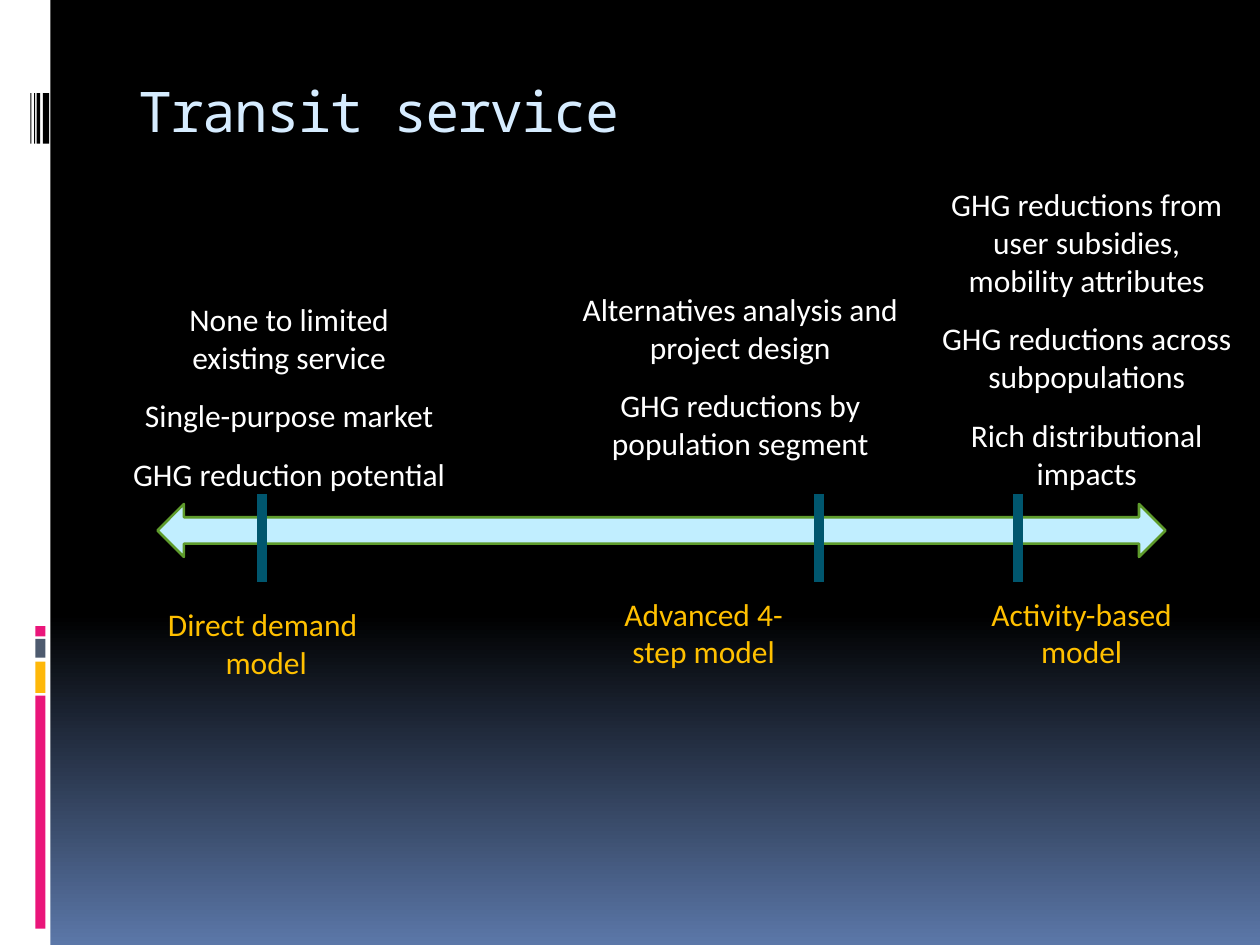
import pptx
import pptx.util
import pptx.dml.color
import pptx.enum.shapes
import pptx.enum.text
import pptx.oxml
from pptx.util import Inches

SHAPE = pptx.enum.shapes.MSO_SHAPE


def rgb(value):
    return pptx.dml.color.RGBColor.from_string(value)


def add_block(s, kind, left, top, width, height, fill, outline=None):
    sp = s.shapes.add_shape(kind, Inches(left), Inches(top), Inches(width), Inches(height))
    sp.shadow.inherit = False
    sp.fill.solid()
    sp.fill.fore_color.rgb = rgb(fill)
    if outline:
        sp.line.color.rgb = rgb(outline)
        sp.line.width = pptx.util.Pt(1.5)
    else:
        sp.line.fill.background()
    return sp


def add_text(s, left, top, width, height, paragraphs, color,
             size=18, font="Calibri", align=pptx.enum.text.PP_ALIGN.CENTER):
    sp = s.shapes.add_textbox(Inches(left), Inches(top), Inches(width), Inches(height))
    tf = sp.text_frame
    tf.word_wrap = True
    tf.text = "\n".join(text for text, _ in paragraphs)
    for p, (_, space_after) in zip(tf.paragraphs, paragraphs):
        p.alignment = align
        p.space_after = pptx.util.Pt(space_after)
        for r in p.runs:
            r.font.size = pptx.util.Pt(size)
            r.font.name = font
            r.font.color.rgb = rgb(color)
    return sp


def add_background(s):
    fill = s.background.fill
    fill.gradient()
    fill.gradient_angle = 270
    for stop, position, color in zip(fill.gradient_stops, (0.65, 1), ("000000", "5B77A8")):
        stop.position = position
        stop.color.rgb = rgb(color)


def add_sidebar(s, left, top, width, height):
    add_block(s, SHAPE.RECTANGLE, left, top, width, height, "FFFFFF")
    for offset, bar_height, color in [(5.52, 1.85, "EA157A"), (5.25, 0.25, "FEB80A"),
                                      (5.07, 0.15, "4E5B6F"), (4.97, 0.08, "EA157A")]:
        add_block(s, SHAPE.RECTANGLE, left + 0.28, top + offset, 0.08, bar_height, color)
    for offset, stripe_width in [(0.34, 0.05), (0.29, 0.03), (0.27, 0.01), (0.24, 0.01)]:
        add_block(s, SHAPE.RECTANGLE, left + offset, top + 0.74, stripe_width, 0.4, "000000")


def add_title(s, left, top, width, height):
    sp = add_text(s, left, top, width, height, [("Transit service", 0)], "D6ECFF",
                  32, "Noto Sans Mono", pptx.enum.text.PP_ALIGN.LEFT)
    sp.text_frame.paragraphs[0].runs[0].font._element.set("spc", "-100")


def add_tick(s, x, top, height):
    line = s.shapes.add_connector(pptx.enum.shapes.MSO_CONNECTOR.STRAIGHT,
                                  Inches(x), Inches(top), Inches(x), Inches(top + height))
    line.line.color.rgb = rgb("00566E")
    line.line.width = pptx.util.Pt(6)
    line._element.spPr.append(pptx.oxml.parse_xml(
        '<a:effectLst xmlns:a="http://schemas.openxmlformats.org/drawingml/2006/main"/>'))


def add_spectrum(s, left, top, width, height):
    add_block(s, SHAPE.LEFT_RIGHT_ARROW, left, top, width, height, "C1EEFF", "5E9B2C")
    stages = [
        (2.08, (1.17, 4.75), [("Direct demand", 0), (" model", 0)],
         (0.92, 2.33, 1.65), [("None to limited", 0), ("existing service", 12),
                              ("Single-purpose market", 12), ("GHG reduction potential", 0)]),
        (6.5, (4.67, 4.67), [("Advanced 4-step model", 0)],
         (4.5, 2.25, 1.48), [("Alternatives analysis and project design", 12),
                             ("GHG reductions by population segment", 0)]),
        (8.08, (7.67, 4.67), [("Activity-based model", 0)],
         (7.25, 1.42, 2.86), [("GHG reductions from user subsidies,", 0),
                              ("mobility attributes", 12),
                              ("GHG reductions across subpopulations", 12),
                              ("Rich distributional impacts", 0)]),
    ]
    for tick_x, (model_x, model_y), model, (use_x, use_y, use_height), uses in stages:
        add_tick(s, tick_x, top - 0.08, 0.7)
        add_text(s, use_x, use_y, 2.75, use_height, uses, "FFFFFF")
        add_text(s, model_x, model_y, 1.83, 0.71, model, "FFC000")


def main():
    prs = pptx.Presentation()
    prs.slide_width, prs.slide_height = Inches(10), Inches(7.5)
    s = prs.slides.add_slide(prs.slide_layouts[6])
    add_background(s)
    add_sidebar(s, 0, 0, 0.4, 7.5)
    add_title(s, 1, 0.56, 8.5, 1)
    add_spectrum(s, 1.25, 4, 8, 0.42)
    prs.save("out.pptx")


if __name__ == "__main__":
    main()
